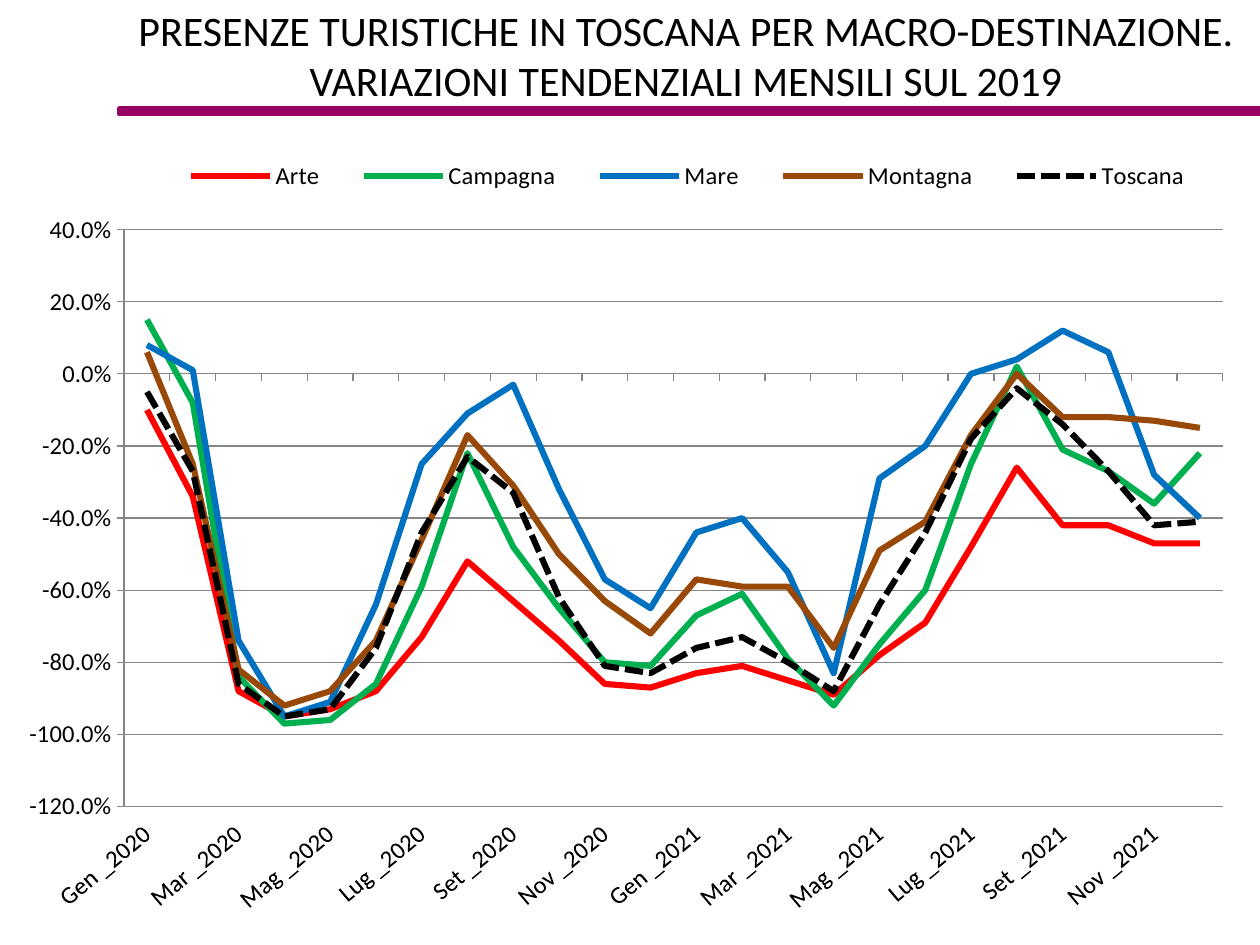
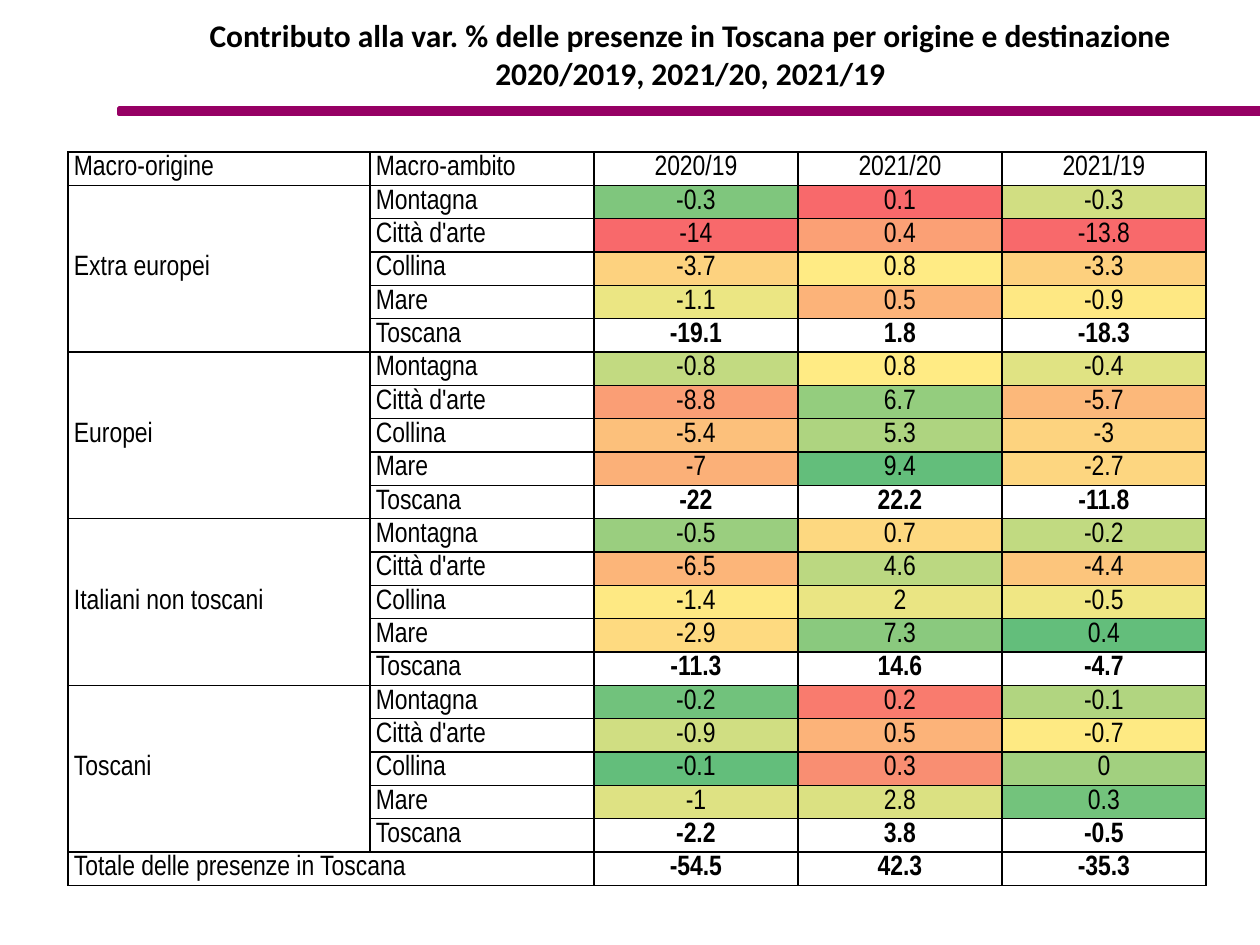
from dataclasses import dataclass

from lxml import etree
from pptx import Presentation
from pptx.chart.data import CategoryChartData
from pptx.dml.color import RGBColor
from pptx.enum.chart import XL_CHART_TYPE, XL_LEGEND_POSITION, XL_MARKER_STYLE
from pptx.enum.chart import XL_TICK_LABEL_POSITION, XL_TICK_MARK
from pptx.enum.dml import MSO_LINE
from pptx.enum.shapes import MSO_SHAPE
from pptx.enum.text import MSO_ANCHOR, MSO_AUTO_SIZE, PP_ALIGN
from pptx.oxml import parse_xml
from pptx.oxml.ns import nsdecls, qn
from pptx.util import Pt

LINE_CHART = XL_CHART_TYPE.LINE
LEGEND_TOP = XL_LEGEND_POSITION.TOP
NO_MARKER = XL_MARKER_STYLE.NONE
LABELS_LOW = XL_TICK_LABEL_POSITION.LOW
TICK_OUTSIDE = XL_TICK_MARK.OUTSIDE
DASH = MSO_LINE.SQUARE_DOT
RECTANGLE = MSO_SHAPE.RECTANGLE
MIDDLE = MSO_ANCHOR.MIDDLE
NO_AUTOFIT = MSO_AUTO_SIZE.NONE
CENTER, JUSTIFY = PP_ALIGN.CENTER, PP_ALIGN.JUSTIFY


@dataclass(frozen=True)
class Theme:
    text: str = "000000"
    band: str = "960064"
    axis: str = "868686"
    font: str = "Calibri"
    table_font: str = "Arial Narrow"
    chart_title_size: int = 24
    table_title_size: int = 18
    table_size: int = 16
    chart_size: int = 14
    series_width: float = 3.5


THEME = Theme()
EMU_PER_PX = 914400 / 126

CHART_TITLE = ("PRESENZE TURISTICHE IN TOSCANA PER MACRO-DESTINAZIONE.\v"
               "VARIAZIONI TENDENZIALI MENSILI SUL 2019")
TABLE_TITLE = ("Contributo alla var. % delle presenze in Toscana per origine e destinazione\v"
               "2020/2019, 2021/20, 2021/19")

BAND_BOX = (119, 108, 1141, 6)
CHART_TITLE_BOX = (117, 3, 1138, 103)
TABLE_TITLE_BOX = (121, 23, 1139, 62)
CHART_BOX = (20, 134, 1225, 780)
PLOT_LAYOUT = (0.085, 0.124, 0.897, 0.748)
LEGEND_LAYOUT = (0.11, 0.03, 0.87, 0.05)
TABLE_BOX = (68, 152, 1138, 734)
COLUMN_WIDTHS = (302, 224, 204, 204, 204)

MONTHS = ("Gen", "Feb", "Mar", "Apr", "Mag", "Giu",
          "Lug", "Ago", "Set", "Ott", "Nov", "Dic")
YEARS = (2020, 2021)

SERIES = [
    ("Arte", "FF0000", None,
     (-0.1, -0.34, -0.88, -0.95, -0.93, -0.88, -0.73, -0.52, -0.63, -0.74, -0.86, -0.87,
      -0.83, -0.81, -0.85, -0.89, -0.78, -0.69, -0.48, -0.26, -0.42, -0.42, -0.47, -0.47)),
    ("Campagna", "00B050", None,
     (0.15, -0.08, -0.84, -0.97, -0.96, -0.86, -0.59, -0.22, -0.48, -0.65, -0.8, -0.81,
      -0.67, -0.61, -0.79, -0.92, -0.75, -0.6, -0.25, 0.02, -0.21, -0.27, -0.36, -0.22)),
    ("Mare", "0070C0", None,
     (0.08, 0.01, -0.74, -0.95, -0.91, -0.64, -0.25, -0.11, -0.03, -0.32, -0.57, -0.65,
      -0.44, -0.4, -0.55, -0.83, -0.29, -0.2, 0, 0.04, 0.12, 0.06, -0.28, -0.4)),
    ("Montagna", "984807", None,
     (0.06, -0.25, -0.82, -0.92, -0.88, -0.74, -0.46, -0.17, -0.31, -0.5, -0.63, -0.72,
      -0.57, -0.59, -0.59, -0.76, -0.49, -0.41, -0.17, 0, -0.12, -0.12, -0.13, -0.15)),
    ("Toscana", "000000", DASH,
     (-0.05, -0.27, -0.86, -0.95, -0.93, -0.76, -0.44, -0.23, -0.33, -0.62, -0.81, -0.83,
      -0.76, -0.73, -0.8, -0.88, -0.64, -0.44, -0.18, -0.04, -0.14, -0.27, -0.42, -0.41)),
]

HEADER = ("Macro-origine", "Macro-ambito", "2020/19", "2021/20", "2021/19")
AREAS = ("Montagna", "Città d'arte", "Collina", "Mare", "Toscana")
ORIGINS = [
    ("Extra europei", [
        (("-0.3", "7FC67D"), ("0.1", "F8696B"), ("-0.3", "D1DE82")),
        (("-14", "F8696B"), ("0.4", "FBA075"), ("-13.8", "F8696B")),
        (("-3.7", "FDD27F"), ("0.8", "FFEB84"), ("-3.3", "FDD07E")),
        (("-1.1", "EBE683"), ("0.5", "FCB379"), ("-0.9", "FEE883")),
    ], ("-19.1", "1.8", "-18.3")),
    ("Europei", [
        (("-0.8", "C2DA81"), ("0.8", "FFEB84"), ("-0.4", "E0E383")),
        (("-8.8", "FA9E75"), ("6.7", "94CD7E"), ("-5.7", "FCB87A")),
        (("-5.4", "FCC07B"), ("5.3", "AED480"), ("-3", "FDD37F")),
        (("-7", "FBB078"), ("9.4", "63BE7B"), ("-2.7", "FDD680")),
    ], ("-22", "22.2", "-11.8")),
    ("Italiani non toscani", [
        (("-0.5", "9ACE7F"), ("0.7", "FDD880"), ("-0.2", "C1DA81")),
        (("-6.5", "FCB579"), ("4.6", "BBD881"), ("-4.4", "FCC57C")),
        (("-1.4", "FEE983"), ("2", "EAE583"), ("-0.5", "F0E784")),
        (("-2.9", "FEDA80"), ("7.3", "8AC97E"), ("0.4", "63BE7B")),
    ], ("-11.3", "14.6", "-4.7")),
    ("Toscani", [
        (("-0.2", "71C27C"), ("0.2", "F97B6E"), ("-0.1", "B1D580")),
        (("-0.9", "D0DE82"), ("0.5", "FCB379"), ("-0.7", "FEEA83")),
        (("-0.1", "63BE7B"), ("0.3", "F98E72"), ("0", "A2D07F")),
        (("-1", "DEE283"), ("2.8", "DBE182"), ("0.3", "73C37C")),
    ], ("-2.2", "3.8", "-0.5")),
]
TOTAL = ("Totale delle presenze in Toscana", ("-54.5", "42.3", "-35.3"))


def px(length):
    return round(length * EMU_PER_PX)


def place(box):
    return [px(length) for length in box]


def rgb(code):
    return RGBColor.from_string(code)


def style_font(font, size, name=THEME.font, bold=False):
    font.name, font.size, font.bold = name, Pt(size), bold
    font.color.rgb = rgb(THEME.text)


def add_titled_slide(presentation, text, box, size, bold=False):
    slide = presentation.slides.add_slide(presentation.slide_layouts.get_by_name("Title Only"))
    title = slide.shapes.title
    title.left, title.top, title.width, title.height = place(box)
    frame = title.text_frame
    frame.text = text
    frame.word_wrap = True
    frame.auto_size = NO_AUTOFIT
    frame.vertical_anchor = MIDDLE
    paragraph = frame.paragraphs[0]
    paragraph.alignment = CENTER
    style_font(paragraph.font, size, bold=bold)
    return slide


def add_master_band(presentation, slide):
    band = slide.shapes.add_shape(RECTANGLE, *place(BAND_BOX))
    band.shadow.inherit = False
    band.fill.solid()
    band.fill.fore_color.rgb = band.line.color.rgb = rgb(THEME.band)
    band.line.width = Pt(2)
    band.element.nvSpPr.cNvPr.set("id", "20")
    presentation.slide_master.shapes.element.append(band.element)


def manual_layout(parent, following, bounds, inner=False):
    for old in parent.findall(qn("c:layout")):
        parent.remove(old)
    layout = parse_xml(f'<c:layout {nsdecls("c")}><c:manualLayout/></c:layout>')
    values = [("layoutTarget", "inner")] if inner else []
    values += [("xMode", "edge"), ("yMode", "edge"), *zip("xywh", bounds)]
    for name, value in values:
        etree.SubElement(layout[0], qn(f"c:{name}")).set("val", str(value))
    parent.find(qn(following)).addprevious(layout)


def style_axis(axis):
    axis.format.line.color.rgb = rgb(THEME.axis)
    axis.major_tick_mark = TICK_OUTSIDE
    style_font(axis.tick_labels.font, THEME.chart_size)


def add_trend_chart(slide):
    data = CategoryChartData(number_format="0.0%")
    data.categories = [f"{month} _{year}" for year in YEARS for month in MONTHS]
    for name, color, dash, values in SERIES:
        data.add_series(name, values)
    chart = slide.shapes.add_chart(LINE_CHART, *place(CHART_BOX), data).chart
    chart.has_title = False
    style_font(chart.font, THEME.chart_size)

    for series, (name, color, dash, values) in zip(chart.plots[0].series, SERIES):
        series.smooth = False
        series.marker.style = NO_MARKER
        line = series.format.line
        line.color.rgb = rgb(color)
        line.width = Pt(THEME.series_width)
        if dash:
            line.dash_style = dash
    chart.plots[0].vary_by_categories = False

    months, variation = chart.category_axis, chart.value_axis
    style_axis(months)
    style_axis(variation)
    months.tick_label_position = LABELS_LOW
    months.tick_labels.font
    months.format.line.width = Pt(0.75)
    months_element = months._element
    months_element.find(qn("c:txPr")).find(qn("a:bodyPr")).set("rot", "-2400000")
    skip = parse_xml(f'<c:tickLblSkip {nsdecls("c")} val="2"/>')
    months_element.find(qn("c:noMultiLvlLbl")).addprevious(skip)

    variation.minimum_scale, variation.maximum_scale = -1.2, 0.4
    variation.major_unit = 0.2
    variation.tick_labels.number_format = "0.0%"
    variation.tick_labels.number_format_is_linked = False
    variation.major_gridlines.format.line.color.rgb = rgb(THEME.axis)

    chart.has_legend = True
    legend = chart.legend
    legend.position = LEGEND_TOP
    legend.include_in_layout = False
    style_font(legend.font, THEME.chart_size)
    manual_layout(legend._element, "c:overlay", LEGEND_LAYOUT)
    plot_area = chart.plots[0]._element.getparent()
    manual_layout(plot_area, "c:lineChart", PLOT_LAYOUT, inner=True)


def table_rows():
    def plain(texts, bold=False):
        return [(text, None, bold) for text in texts]

    rows = [plain(HEADER)]
    for origin, area_values, totals in ORIGINS:
        for index, (area, values) in enumerate(zip(AREAS, area_values)):
            rows.append(plain((origin if index == 0 else "", area))
                        + [(text, color, False) for text, color in values])
        rows.append(plain(("", AREAS[-1])) + plain(totals, bold=True))
    label, totals = TOTAL
    return rows + [plain((label, "")) + plain(totals, bold=True)]


def style_cell(cell, text, color, bold, alignment):
    properties = cell._tc.get_or_add_tcPr()
    for side in ("lnL", "lnR", "lnT", "lnB"):
        properties.append(parse_xml(
            f'<a:{side} {nsdecls("a")} w="12700"><a:solidFill>'
            f'<a:srgbClr val="{THEME.text}"/></a:solidFill></a:{side}>'))
    if color:
        cell.fill.solid()
        cell.fill.fore_color.rgb = rgb(color)
    else:
        cell.fill.background()
    cell.margin_left = cell.margin_right = px(6)
    cell.margin_top = cell.margin_bottom = 0
    cell.vertical_anchor = MIDDLE
    cell.text = text
    paragraph = cell.text_frame.paragraphs[0]
    paragraph.alignment = alignment
    style_font(paragraph.font, THEME.table_size, THEME.table_font, bold)


def add_contribution_table(slide):
    rows = table_rows()
    table = slide.shapes.add_table(len(rows), len(HEADER), *place(TABLE_BOX)).table
    table.first_row = table.horz_banding = False
    for column, width in zip(table.columns, COLUMN_WIDTHS):
        column.width = px(width)
    for row_index, row in enumerate(rows):
        table.rows[row_index].height = px(TABLE_BOX[3] / len(rows))
        for column_index, content in enumerate(row):
            alignment = JUSTIFY if column_index < 2 else CENTER
            style_cell(table.cell(row_index, column_index), *content, alignment)
    last = len(rows) - 1
    for top in range(1, last, len(AREAS)):
        table.cell(top, 0).merge(table.cell(top + len(AREAS) - 1, 0))
    table.cell(last, 0).merge(table.cell(last, 1))


def main():
    presentation = Presentation()
    presentation.slide_width, presentation.slide_height = px(1260), px(945)

    chart_slide = add_titled_slide(presentation, CHART_TITLE, CHART_TITLE_BOX,
                                   THEME.chart_title_size)
    add_master_band(presentation, chart_slide)
    add_trend_chart(chart_slide)

    table_slide = add_titled_slide(presentation, TABLE_TITLE, TABLE_TITLE_BOX,
                                   THEME.table_title_size, bold=True)
    add_contribution_table(table_slide)
    presentation.save("out.pptx")


if __name__ == "__main__":
    main()
